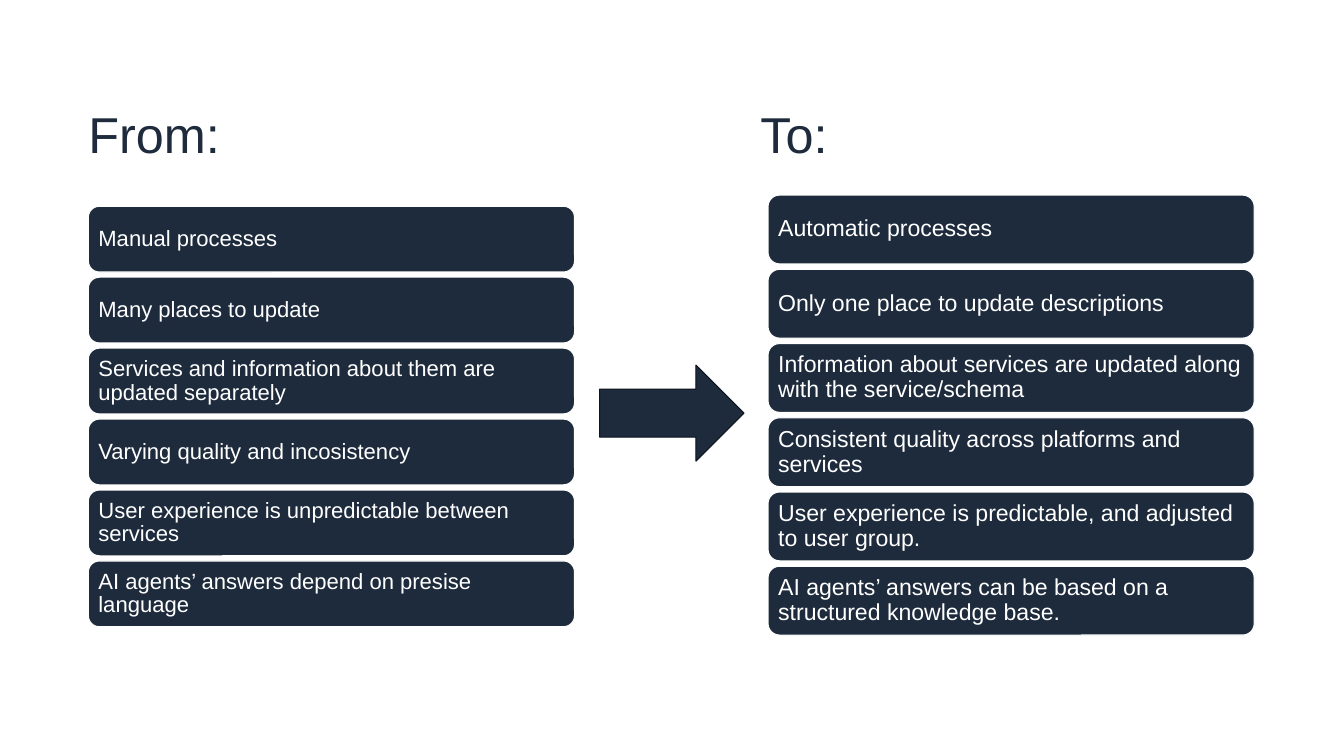
from pptx import Presentation
from pptx.dml.color import RGBColor
from pptx.enum.shapes import MSO_SHAPE
from pptx.enum.text import MSO_ANCHOR, MSO_AUTO_SIZE, PP_ALIGN
from pptx.oxml.ns import qn
from pptx.util import Pt
from lxml.etree import SubElement

NAVY = RGBColor(0x1E, 0x2B, 0x3C)
DARK_NAVY = RGBColor(0x0D, 0x13, 0x1A)
WHITE = RGBColor(0xFF, 0xFF, 0xFF)
FONT = "Arial"

FROM_ITEMS = [
    "Manual processes",
    "Many places to update",
    "Services and information about them are updated separately",
    "Varying quality and incosistency",
    "User experience is unpredictable between services",
    "AI agents’ answers depend on presise language",
]
TO_ITEMS = [
    "Automatic processes",
    "Only one place to update descriptions",
    "Information about services are updated along with the service/schema",
    "Consistent quality across platforms and services",
    "User experience is predictable, and adjusted to user group.",
    "AI agents’ answers can be based on a structured knowledge base.",
]


def write_text(shape, text, size, color, anchor, margin):
    frame = shape.text_frame
    frame.word_wrap = True
    frame.auto_size = MSO_AUTO_SIZE.NONE
    frame.vertical_anchor = anchor
    frame.margin_left = frame.margin_right = Pt(margin)
    frame.margin_top = frame.margin_bottom = Pt(margin)
    para = frame.paragraphs[0]
    para.alignment = PP_ALIGN.LEFT
    para.line_spacing = 0.9
    para.space_before = Pt(0)
    span = para.add_run()
    span.text = text
    span.font.name = FONT
    span.font.size = Pt(size)
    span.font.color.rgb = color
    return para


def add_filled_shape(page, kind, left, top, width, height, line_color):
    shape = page.shapes.add_shape(kind, Pt(left), Pt(top), Pt(width), Pt(height))
    shape.shadow.inherit = False
    shape.fill.solid()
    shape.fill.fore_color.rgb = NAVY
    shape.line.color.rgb = line_color
    shape.line.width = Pt(1)
    return shape


def place_title(page, left, top, width, height, second_heading):
    """Put both headings in the title, the second at a tab stop."""
    title = page.shapes.title
    title.left, title.top = Pt(left), Pt(top)
    title.width, title.height = Pt(width), Pt(height)
    para = write_text(title, "From:\tTo:", 48, NAVY, MSO_ANCHOR.BOTTOM, 0)
    tabs = SubElement(para._p.get_or_add_pPr(), qn("a:tabLst"))
    SubElement(tabs, qn("a:tab"), pos=str(Pt(second_heading)), algn="l")


def add_column(page, items, left, top, width, height, card_height, size):
    """Stack one card per item, evenly spread over the box."""
    pitch = (height - card_height) / (len(items) - 1)
    for index, item in enumerate(items):
        card = add_filled_shape(page, MSO_SHAPE.ROUNDED_RECTANGLE, left,
                                top + index * pitch, width, card_height, WHITE)
        write_text(card, item, size, WHITE, MSO_ANCHOR.MIDDLE, 6.5)


def main():
    deck = Presentation()
    deck.slide_width, deck.slide_height = Pt(1280), Pt(720)
    page = deck.slides.add_slide(deck.slide_layouts[5])
    place_title(page, 84.2, 45.4, 1111.7, 111.6, 640)
    add_column(page, TO_ITEMS, 731.5, 185.8, 463, 419, 65.5, 22)
    add_column(page, FROM_ITEMS, 84.2, 196.5, 463, 400.4, 62.6, 21)
    add_filled_shape(page, MSO_SHAPE.RIGHT_ARROW, 571, 347.8, 137.5, 91.4, DARK_NAVY)
    deck.save("out.pptx")


if __name__ == "__main__":
    main()
